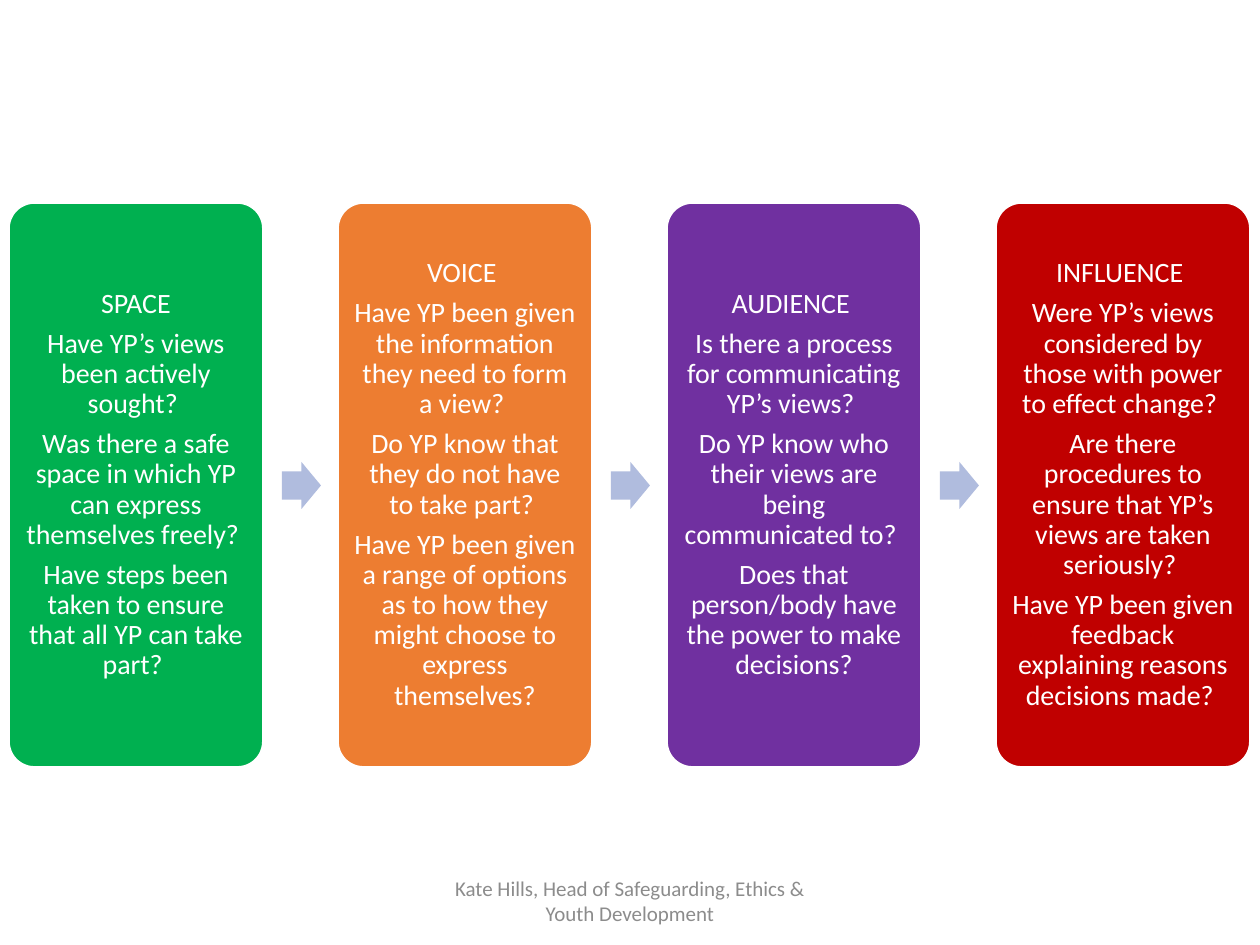
from dataclasses import dataclass

from pptx import Presentation
from pptx.dml.color import RGBColor
from pptx.enum.shapes import MSO_SHAPE as Shape
from pptx.enum.text import MSO_ANCHOR as Anchor, PP_ALIGN as Align
from pptx.util import Pt

PX = 914400 / 126  # EMU per px

WHITE = RGBColor(0xFF, 0xFF, 0xFF)
GREEN = RGBColor(0x00, 0xB0, 0x50)
ORANGE = RGBColor(0xED, 0x7D, 0x31)
PURPLE = RGBColor(0x70, 0x30, 0xA0)
RED = RGBColor(0xC0, 0x00, 0x00)
ARROW_BLUE = RGBColor(0xB0, 0xBC, 0xDE)
GREY = RGBColor(0x8C, 0x8C, 0x8C)

FONT = "Calibri"
CARD_LEFT, CARD_TOP, CARD_W, CARD_H = 9, 203, 254, 564
PITCH = 329
ARROW_LEFT, ARROW_TOP, ARROW_W, ARROW_H = 282, 462, 39, 47
CARD_INSET = 9


@dataclass(frozen=True)
class Card:
    fill: RGBColor
    paragraphs: tuple[str, ...]


CARDS = (
    Card(GREEN, (
        "SPACE",
        "Have YP’s views been actively sought? ",
        "Was there a safe space in which YP can express themselves freely? ",
        "Have steps been taken to ensure that all YP can take part? ",
    )),
    Card(ORANGE, (
        "VOICE ",
        "Have YP been given the information they need to form a view? ",
        "Do YP know that they do not have to take part? ",
        "Have YP been given a range of options as to how they might choose "
        "to express themselves?",
    )),
    Card(PURPLE, (
        "AUDIENCE ",
        "Is there a process for communicating YP’s views? ",
        "Do YP know who their views are being communicated to? ",
        "Does that person/body have the power to make decisions?",
    )),
    Card(RED, (
        "INFLUENCE ",
        "Were YP’s views considered by those with power to effect change? ",
        "Are there procedures to ensure that YP’s views are taken seriously? ",
        "Have YP been given feedback explaining reasons decisions made? ",
    )),
)


def px(n: int) -> int:
    return round(n * PX)


def box(left: int, top: int, width: int, height: int) -> tuple[int, ...]:
    return px(left), px(top), px(width), px(height)


def add_run(p, text: str, size: int, color: RGBColor) -> None:
    p.alignment = Align.CENTER
    r = p.add_run()
    r.text = text
    r.font.name = FONT
    r.font.size = Pt(size)
    r.font.color.rgb = color


def add_card(s, card: Card, left: int) -> None:
    sp = s.shapes.add_shape(Shape.ROUNDED_RECTANGLE,
                            *box(left, CARD_TOP, CARD_W, CARD_H))
    sp.adjustments[0] = 0.1
    sp.shadow.inherit = False
    sp.fill.solid()
    sp.fill.fore_color.rgb = card.fill
    sp.line.color.rgb = WHITE
    sp.line.width = Pt(1)
    tf = sp.text_frame
    tf.word_wrap = True
    tf.vertical_anchor = Anchor.MIDDLE
    tf.margin_left = tf.margin_right = px(CARD_INSET)
    tf.margin_top = tf.margin_bottom = px(CARD_INSET)
    for i, text in enumerate(card.paragraphs):
        p = tf.add_paragraph() if i else tf.paragraphs[0]
        p.line_spacing = 0.9
        p.space_after = Pt(5.6)
        add_run(p, text, 16, WHITE)


def add_arrow(s, left: int) -> None:
    sp = s.shapes.add_shape(Shape.RIGHT_ARROW,
                            *box(left, ARROW_TOP, ARROW_W, ARROW_H))
    sp.adjustments[0] = 0.6
    sp.adjustments[1] = 0.5
    sp.shadow.inherit = False
    sp.fill.solid()
    sp.fill.fore_color.rgb = ARROW_BLUE
    sp.line.fill.background()


def add_footer(s, text: str) -> None:
    tf = s.shapes.add_textbox(*box(417, 876, 426, 50)).text_frame
    tf.word_wrap = True
    tf.vertical_anchor = Anchor.MIDDLE
    add_run(tf.paragraphs[0], text, 12, GREY)


def main() -> None:
    prs = Presentation()
    prs.slide_width, prs.slide_height = px(1260), px(945)
    s = prs.slides.add_slide(prs.slide_layouts[6])

    # Footer
    add_footer(s, "Kate Hills, Head of Safeguarding, Ethics & Youth Development")

    # Four steps, with an arrow between neighbours
    for i, card in enumerate(CARDS):
        if i:
            add_arrow(s, ARROW_LEFT + (i - 1) * PITCH)
        add_card(s, card, CARD_LEFT + i * PITCH)

    prs.save("out.pptx")


if __name__ == "__main__":
    main()
